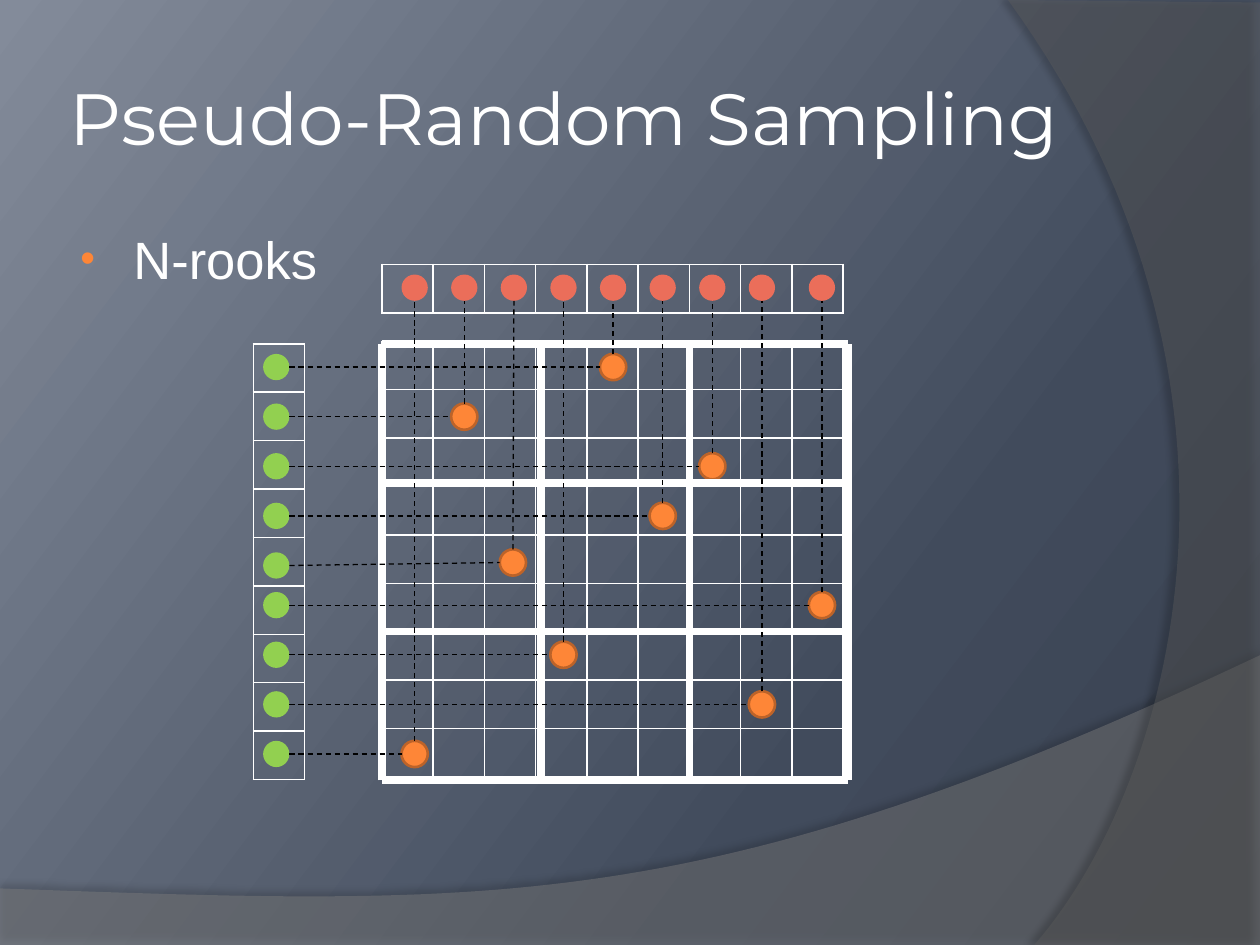
import pptx
import pptx.dml.color
import pptx.enum.dml
import pptx.enum.shapes
import pptx.enum.text
import pptx.oxml
import pptx.oxml.ns
import pptx.util
import copy
from lxml import etree

Cm, Pt = pptx.util.Cm, pptx.util.Pt
NS = pptx.oxml.ns.nsdecls("a")
qn = pptx.oxml.ns.qn

N = 9
CELL_W, CELL_H = 9.3 / N, 8.79 / N
DOT = 0.53
# Dot centres, 1 cm apart with one irregular gap each way
COL_X = [8.36 + i for i in range(8)] + [16.57]
ROW_Y = [7.4 + i for i in range(5)] + [12.2 + i for i in range(4)]
ROOK_COLS = [4, 1, 6, 5, 2, 8, 3, 7, 0]
NUDGES = {4: (-0.02, -0.06)}


def rgb(color):
    return pptx.dml.color.RGBColor.from_string(color)


def put(obj, formats):
    for name, value in formats.items():
        setattr(obj, name, value)


def background(s):
    fill = s.background.fill
    fill.gradient()
    stops = s.element.xpath(".//p:bg//a:gsLst")[0]
    stops.append(copy.deepcopy(stops[-1]))
    colors = [(0, "373F4D"), (0.3, "414B5C"), (1, "838B9A")]
    for stop, (position, color) in zip(fill.gradient_stops, colors):
        stop.position = position
        stop.color.rgb = rgb(color)
    fill.gradient_angle = 143


def bezier(p0, p1, p2, p3, steps=60):
    for k in range(1, steps + 1):
        t = k / steps
        yield [(1 - t) ** 3 * a + 3 * t * (1 - t) ** 2 * b
               + 3 * t * t * (1 - t) * c + t ** 3 * d
               for a, b, c, d in zip(p0, p1, p2, p3)]


def swoosh(s, left, top, corners, curve, color, alpha, shadow):
    """Translucent band: straight corners, then one curve from the last corner."""
    points = [(Cm(left + x), Cm(top + y))
              for x, y in corners + list(bezier(corners[-1], *curve))]
    builder = s.shapes.build_freeform(*points[0], scale=1.0)
    builder.add_line_segments(points[1:], close=True)
    sp = builder.convert_to_shape()
    sp.fill.solid()
    sp.fill.fore_color.rgb = rgb(color)
    sp.line.fill.background()
    clr = sp._element.spPr.find(qn("a:solidFill"))[0]
    etree.SubElement(clr, qn("a:alpha"), val=str(alpha * 1000))
    opacity, blur, dist, angle = shadow
    sp._element.spPr.append(pptx.oxml.parse_xml(
        f'<a:effectLst {NS}><a:outerShdw blurRad="{Pt(blur)}" dist="{Pt(dist)}" '
        f'dir="{angle * 60000}" algn="ctr" rotWithShape="0"><a:srgbClr val="000000">'
        f'<a:alpha val="{opacity * 1000}"/></a:srgbClr></a:outerShdw></a:effectLst>'))


def text(s, box, words, frame, font, color):
    sp = s.shapes.add_textbox(*map(Cm, box))
    tf = sp.text_frame
    put(tf, {"word_wrap": True, **frame})
    p = tf.paragraphs[0]
    r = p.add_run()
    r.text = words
    put(r.font, font)
    r.font.color.rgb = rgb(color)
    return p


def title(s, box):
    inset = Cm(0.13)
    frame = {"vertical_anchor": pptx.enum.text.MSO_ANCHOR.MIDDLE}
    frame.update({f"margin_{side}": inset for side in ("left", "top", "right", "bottom")})
    text(s, box, "Pseudo-Random Sampling", frame,
         {"name": "Montserrat", "size": Pt(41.4)}, "FFFFFF")


def bullet(s, box):
    p = text(s, box, "N-rooks", {}, {"name": "Arial", "size": Pt(30)}, "FFFFFF")
    pPr = p._p.get_or_add_pPr()
    pPr.set("marL", str(Cm(1.17)))
    pPr.set("indent", str(Cm(-1.07)))
    for xml in (f'<a:spcBef {NS}><a:spcPct val="20000"/></a:spcBef>',
                f'<a:buClr {NS}><a:srgbClr val="FE8637"/></a:buClr>',
                f'<a:buSzPct {NS} val="80000"/>',
                f'<a:buFont {NS} typeface="Arial"/>',
                f'<a:buChar {NS} char="•"/>'):
        pPr.append(pptx.oxml.parse_xml(xml))


def format_cell(cell, sides):
    put(cell, {"margin_top": 0, "margin_bottom": 0})
    tcPr = cell._tc.get_or_add_tcPr()
    for side in sides:
        tcPr.append(pptx.oxml.parse_xml(
            f'<a:ln{side} {NS} w="{Pt(1)}"><a:solidFill><a:srgbClr val="FFFFFF"/>'
            f'</a:solidFill></a:ln{side}>'))
    cell.fill.background()


def grid(s, left, top, rows, cols, foot=0):
    """Outlined empty cells; foot is the height of a merged last row."""
    heights = [CELL_H] * rows + ([foot] if foot else [])
    frame = s.shapes.add_table(len(heights), cols, Cm(left), Cm(top),
                               Cm(cols * CELL_W), Cm(sum(heights)))
    frame._element.xpath(".//a:tableStyleId")[0].text = \
        "{2D5ABB26-0587-4C30-8999-92F81FD0307C}"
    table = frame.table
    put(table, {"first_row": False, "horz_banding": False})
    for column in table.columns:
        column.width = Cm(CELL_W)
    for i, height in enumerate(heights):
        table.rows[i].height = Cm(height)
        for j in range(cols):
            format_cell(table.cell(i, j), "LRTB" if i < rows else "T")
    if foot:
        for j in range(0, cols, 3):
            table.cell(rows, j).merge(table.cell(rows, j + 2))


def line(s, x1, y1, x2, y2, color, width, dash=None):
    c = s.shapes.add_connector(pptx.enum.shapes.MSO_CONNECTOR.STRAIGHT,
                               Cm(x1), Cm(y1), Cm(x2), Cm(y2))
    c.line.color.rgb = rgb(color)
    put(c.line, {"width": Pt(width), "dash_style": dash})
    etree.SubElement(c._element.spPr, qn("a:effectLst"))


def dot(s, x, y, color, outline=None):
    sp = s.shapes.add_shape(pptx.enum.shapes.MSO_SHAPE.OVAL, Cm(x - DOT / 2),
                            Cm(y - DOT / 2), Cm(DOT), Cm(DOT))
    sp.shadow.inherit = False
    sp.fill.solid()
    sp.fill.fore_color.rgb = rgb(color)
    if outline:
        sp.line.color.rgb = rgb(outline)
        sp.line.width = Pt(1.5)
    else:
        sp.line.fill.background()


def rooks_diagram(s, left, top):
    """Board at left, top with a row strip, a column strip and the rooks."""
    dx, dy = left - 7.7, top - 6.88
    xs, ys = [x + dx for x in COL_X], [y + dy for y in ROW_Y]
    row_x, col_y = left - 2.13, top - 1.08
    rooks = []
    for i, col in enumerate(ROOK_COLS):
        nx, ny = NUDGES.get(i, (0, 0))
        rooks.append((xs[col] + nx, ys[i] + ny))

    # Board and rooks
    grid(s, left, top, N, N, foot=2.93)
    for x, y in rooks:
        dot(s, x, y, "FE8637", "BC6329")

    # Heavy lines around the 3 by 3 blocks
    base = top + 0.05
    for offset in (0, 2.8, 5.8, 8.8):
        line(s, left, base + offset, left + 9.4, base + offset, "FFFFFF", 4.5)
    for offset in (0, 3.2, 6.2, 9.4):
        line(s, left + offset, base + 8.8, left + offset, base, "FFFFFF", 4.5)

    # Strips with one dot for each row and column
    grid(s, left - 2.59, base, N, 1)
    grid(s, left, top - 1.55, 1, N)
    for x, y in zip(xs, ys):
        dot(s, row_x, y, "92D050")
        dot(s, x, col_y, "EB6E5A")

    # Dashed guides from the strips to each rook
    dash = pptx.enum.dml.MSO_LINE.DASH
    edge = DOT / 2
    for i, (x, y) in enumerate(rooks):
        line(s, row_x + edge, ys[i], x - edge, y, "000000", 0.75, dash)
        line(s, x, y - edge, xs[ROOK_COLS[i]], col_y + edge, "000000", 0.75, dash)


def main():
    prs = pptx.Presentation()
    put(prs, {"slide_width": Cm(25.4), "slide_height": Cm(19.05)})
    s = prs.slides.add_slide(prs.slide_layouts[6])
    background(s)
    swoosh(s, 0, 13.21, [(0, 4.7), (0, 5.84), (25.4, 5.84), (25.4, 0)],
           [(14.2, 5.31), (9.93, 5.05), (0, 4.7)], "7F7F7F", 45, (35, 4, 3.5, 270))
    swoosh(s, 20.32, 0, [(5.08, 0.05), (5.08, 19.05), (0.53, 19.05)],
           [(3.43, 15.72), (5.54, 7.62), (0, 0)], "5E5E5E", 40, (45, 4, 4, 180))
    title(s, (1.27, 0.76, 22.43, 3.18))
    bullet(s, (1.27, 4.45, 5.64, 2.08))
    rooks_diagram(s, 7.7, 6.88)
    prs.save("out.pptx")


if __name__ == "__main__":
    main()
